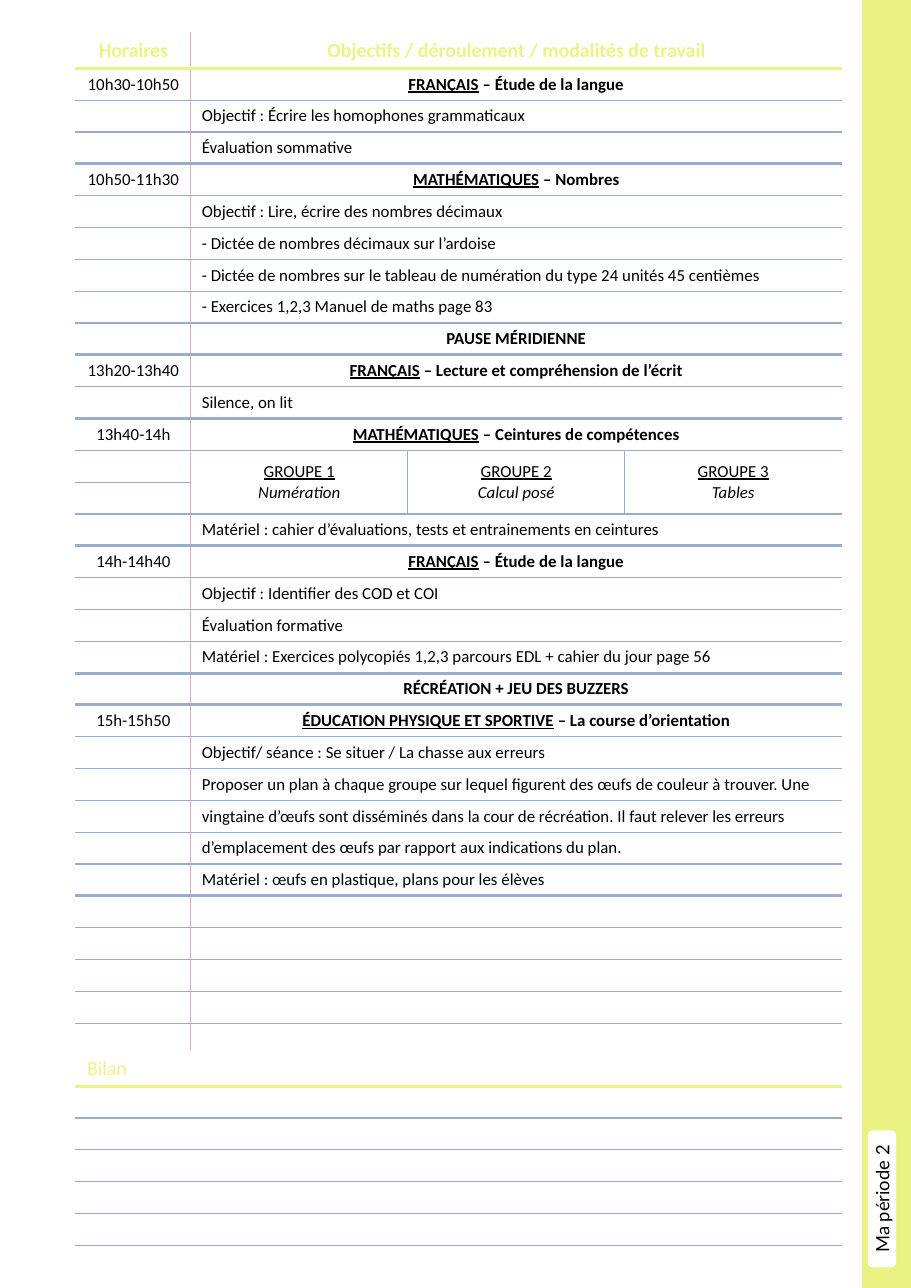
from lxml.etree import SubElement
from pptx import Presentation
from pptx.dml.color import RGBColor
from pptx.enum.shapes import MSO_SHAPE as Shape
from pptx.enum.text import MSO_ANCHOR as Anchor, PP_ALIGN as Align
from pptx.oxml.ns import qn
from pptx.util import Pt

PAGE_W, PAGE_H = 595.3, 841.9
BAND, YELLOW, RULE, THICK_RULE = "EAF283", "EBF482", "9AADCD", "9BADCD"
PINK, WHITE, BLACK = "DCA9CC", "FFFFFF", "000000"
THIN, THICK = 1, 2.25
HEADER_H, ROW_H = 22.9, 20.8
BLANK_ROWS = 5
HEADING = {"size": Pt(13), "name": "Calibri", "color": YELLOW}
BODY = {"size": Pt(11), "name": "Calibri", "color": BLACK}

# time, subject, topic, lines; a tuple among the lines holds the parallel groups
SESSIONS = [
    ("10h30-10h50", "FRANÇAIS", " – Étude de la langue", [
        "Objectif : Écrire les homophones grammaticaux",
        "Évaluation sommative"]),
    ("10h50-11h30", "MATHÉMATIQUES", " – Nombres", [
        "Objectif : Lire, écrire des nombres décimaux",
        "- Dictée de nombres décimaux sur l’ardoise",
        "- Dictée de nombres sur le tableau de numération du type 24 unités 45 centièmes",
        "- Exercices 1,2,3 Manuel de maths page 83"]),
    ("", "", "PAUSE MÉRIDIENNE", []),
    ("13h20-13h40", "FRANÇAIS", " – Lecture et compréhension de l’écrit", [
        "Silence, on lit"]),
    ("13h40-14h", "MATHÉMATIQUES", " – Ceintures de compétences", [
        ("Numération", "Calcul posé", "Tables"),
        "Matériel : cahier d’évaluations, tests et entrainements en ceintures"]),
    ("14h-14h40", "FRANÇAIS", " – Étude de la langue", [
        "Objectif : Identifier des COD et COI",
        "Évaluation formative",
        "Matériel : Exercices polycopiés 1,2,3 parcours EDL + cahier du jour page 56"]),
    ("", "", "RÉCRÉATION + JEU DES BUZZERS", []),
    ("15h-15h50", "ÉDUCATION PHYSIQUE ET SPORTIVE", " – La course d’orientation", [
        "Objectif/ séance : Se situer / La chasse aux erreurs",
        "Proposer un plan à chaque groupe sur lequel figurent des œufs de couleur à trouver. Une",
        "vingtaine d’œufs sont disséminés dans la cour de récréation. Il faut relever les erreurs",
        "d’emplacement des œufs par rapport aux indications du plan.",
        "Matériel : œufs en plastique, plans pour les élèves"]),
]


def rgb(code):
    return RGBColor.from_string(code)


def add_span(para, text, style, **extra):
    span = para.add_run()
    span.text = text
    for key, value in {**style, **extra}.items():
        if key == "color":
            span.font.color.rgb = rgb(value)
        else:
            setattr(span.font, key, value)


def write(cell, text, style, align=Align.LEFT, **extra):
    para = cell.text_frame.paragraphs[0]
    para.alignment = align
    if text:
        add_span(para, text, style, **extra)


def format_cell(cell, left, right, top, bottom):
    """Fill the cell white and draw its four (colour, width) borders."""
    props = cell._tc.get_or_add_tcPr()
    for side, (color, width) in zip("LRTB", (left, right, top, bottom)):
        line = SubElement(props, qn(f"a:ln{side}"), w=str(Pt(width)))
        SubElement(SubElement(line, qn("a:solidFill")), qn("a:srgbClr"), val=color)
    cell.fill.solid()
    cell.fill.fore_color.rgb = rgb(WHITE)


def shrink_empty(cell):
    """Keep an empty cell from growing its row."""
    para = cell.text_frame.paragraphs[0]
    if not para.runs:
        SubElement(para._p, qn("a:endParaRPr"), sz="1100")


def add_ruled_table(page, left, top, widths, count):
    heights = [HEADER_H] + [ROW_H] * (count - 1)
    table = page.shapes.add_table(count, len(widths), Pt(left), Pt(top),
                                  Pt(sum(widths)), Pt(sum(heights))).table
    table.first_row = table.horz_banding = False
    for column, width in zip(table.columns, widths):
        column.width = Pt(width)
    for row, height in zip(table.rows, heights):
        row.height = Pt(height)
    return table


def add_groups(table, row, themes):
    for col, theme in enumerate(themes, 1):
        cell = table.cell(row, col)
        cell.merge(table.cell(row + 1, col))
        cell.vertical_anchor = Anchor.MIDDLE
        write(cell, f"GROUPE {col}", BODY, Align.CENTER, underline=True)
        para = cell.text_frame.add_paragraph()
        para.alignment = Align.CENTER
        add_span(para, theme, BODY, italic=True)


def add_timetable(page, left, top, time_w, group_w):
    line_count = sum(1 + sum(2 if isinstance(line, tuple) else 1 for line in lines)
                     for *_, lines in SESSIONS)
    count = 1 + line_count + BLANK_ROWS
    table = add_ruled_table(page, left, top, [time_w] + [group_w] * 3, count)
    write(table.cell(0, 0), "Horaires", HEADING, Align.CENTER, bold=True)
    write(table.cell(0, 1), "Objectifs / déroulement / modalités de travail",
          HEADING, Align.CENTER, bold=True)

    group_rows, session_ends = set(), set()
    row = 1
    for time, subject, topic, lines in SESSIONS:
        write(table.cell(row, 0), time, BODY, Align.CENTER)
        title = table.cell(row, 1)
        write(title, subject, BODY, Align.CENTER, bold=True, underline=True)
        add_span(title.text_frame.paragraphs[0], topic, BODY, bold=True)
        row += 1
        for line in lines:
            if isinstance(line, tuple):
                add_groups(table, row, line)
                group_rows |= {row, row + 1}
                row += 2
            else:
                write(table.cell(row, 1), line, BODY)
                row += 1
        session_ends.add(row - 1)

    above = (WHITE, THIN)
    for row in range(count):
        below = ((YELLOW, THICK) if row == 0 else
                 (THICK_RULE, THICK) if row in session_ends else (RULE, THIN))
        divider = THICK_RULE if row in group_rows else WHITE
        sides = [WHITE, PINK, divider, divider, WHITE]
        for col in range(4):
            cell = table.cell(row, col)
            format_cell(cell, (sides[col], THIN), (sides[col + 1], THIN), above, below)
            shrink_empty(cell)
        if row not in group_rows:
            table.cell(row, 1).merge(table.cell(row, 3))
        above = below


def add_review(page, left, top, width, lines):
    table = add_ruled_table(page, left, top, [width / 2] * 2, lines + 1)
    write(table.cell(0, 0), "Bilan", HEADING)
    side = above = (WHITE, THIN)
    for row in range(lines + 1):
        below = (THICK_RULE, THIN) if row else (YELLOW, THICK)
        for col in range(2):
            format_cell(table.cell(row, col), side, side, above, below)
            shrink_empty(table.cell(row, col))
        if row:
            table.cell(row, 0).merge(table.cell(row, 1))
        above = below


def add_block(page, kind, box, color):
    block = page.shapes.add_shape(kind, *map(Pt, box))
    block.shadow.inherit = False
    block.fill.solid()
    block.fill.fore_color.rgb = block.line.color.rgb = rgb(color)
    block.line.width = Pt(1)
    return block


def add_period_band(page, left, top, width, height):
    add_block(page, Shape.RECTANGLE, (left, top, width, height), BAND)
    tab_box = (left + 3.6, top + height - 102.5, 17.5, 88.6)
    frame = add_block(page, Shape.ROUNDED_RECTANGLE, tab_box, WHITE).text_frame
    for side in ("left", "top", "right", "bottom"):
        setattr(frame, f"margin_{side}", 0)
    frame.word_wrap = False
    frame.vertical_anchor = Anchor.MIDDLE
    frame._txBody.bodyPr.set("vert", "vert270")
    para = frame.paragraphs[0]
    para.alignment = Align.CENTER
    add_span(para, "Ma période 2", {"size": Pt(12), "name": "Lato", "color": BLACK})


def main():
    deck = Presentation()
    deck.slide_width, deck.slide_height = Pt(PAGE_W), Pt(PAGE_H)
    page = deck.slides.add_slide(deck.slide_layouts[6])
    add_period_band(page, 564, 0, PAGE_W - 564, PAGE_H)
    add_timetable(page, 49.7, 21.6, 75, 141.8)
    add_review(page, 49.7, 686.9, 500.4, 5)
    deck.save("out.pptx")


if __name__ == "__main__":
    main()
